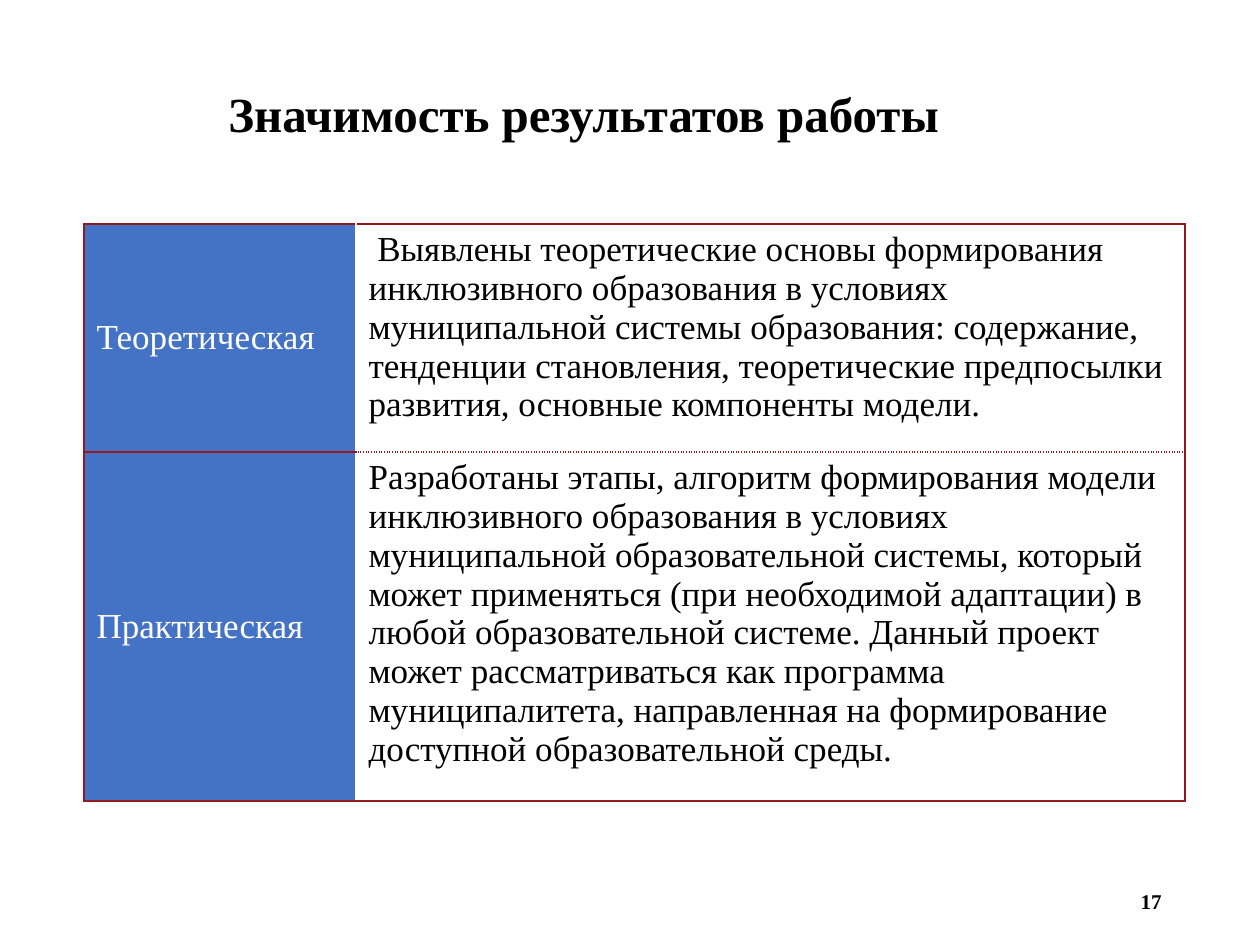
from lxml import etree
from pptx import Presentation
from pptx.dml.color import RGBColor
from pptx.enum.text import MSO_ANCHOR, PP_ALIGN
from pptx.oxml.ns import qn
from pptx.util import Emu, Pt

MIDDLE, TOP = MSO_ANCHOR.MIDDLE, MSO_ANCHOR.TOP
LEFT, CENTER, RIGHT = PP_ALIGN.LEFT, PP_ALIGN.CENTER, PP_ALIGN.RIGHT

BLACK = RGBColor(0x00, 0x00, 0x00)
WHITE = RGBColor(0xFF, 0xFF, 0xFF)
BLUE = RGBColor(0x44, 0x72, 0xC4)
DARK_RED = RGBColor(0x92, 0x1A, 0x1D)

FONT = "Times New Roman"
PX_PER_INCH = 126
COLUMN_WIDTHS = (272, 829)
ROW_HEIGHTS = (228, 323)

RESULTS = (
    ("Теоретическая",
     " Выявлены теоретические основы формирования инклюзивного образования "
     "в условиях муниципальной системы образования: содержание, тенденции "
     "становления, теоретические предпосылки развития, основные компоненты "
     "модели."),
    ("Практическая",
     "Разработаны этапы, алгоритм формирования модели инклюзивного "
     "образования в условиях муниципальной образовательной системы, который "
     "может применяться (при необходимой адаптации) в любой образовательной "
     "системе. Данный проект может рассматриваться как программа "
     "муниципалитета, направленная на формирование доступной образовательной "
     "среды."),
)


def px(n):
    return Emu(round(n * 914400 / PX_PER_INCH))


def write(tf, text, size, color=BLACK, bold=False, align=LEFT):
    """Fill a text frame with one formatted paragraph and return it."""
    p = tf.paragraphs[0]
    p.text = text
    p.alignment = align
    p.font.name = FONT
    p.font.size = Pt(size)
    p.font.bold = bold
    p.font.color.rgb = color
    return p


def add_title(s, text):
    sp = s.shapes.title
    sp.left, sp.top, sp.width, sp.height = px(121), px(53), px(925), px(127)
    sp.text_frame.vertical_anchor = MIDDLE
    p = write(sp.text_frame, text, 28, bold=True, align=CENTER)
    p.line_spacing = 0.9


def add_page_number(s, text):
    sp = s.shapes.add_textbox(px(891), px(876), px(283), px(50))
    tf = sp.text_frame
    tf.word_wrap = True
    tf.vertical_anchor = MIDDLE
    write(tf, text, 12, bold=True, align=RIGHT)


def add_border(cell, side, dash="solid"):
    """Draw one cell edge; side is L, R, T or B, in that order."""
    ln = etree.SubElement(cell._tc.get_or_add_tcPr(), qn(f"a:ln{side}"),
                          w=str(Pt(1)))
    fill = etree.SubElement(ln, qn("a:solidFill"))
    etree.SubElement(fill, qn("a:srgbClr"), val=str(DARK_RED))
    etree.SubElement(ln, qn("a:prstDash"), val=dash)


def format_cell(cell, text, fill, color, anchor):
    write(cell.text_frame, text, 20, color)
    cell.vertical_anchor = anchor
    cell.fill.solid()
    cell.fill.fore_color.rgb = fill


def add_results_table(s):
    frame = s.shapes.add_table(len(RESULTS), len(COLUMN_WIDTHS), px(84), px(224),
                               px(sum(COLUMN_WIDTHS)), px(sum(ROW_HEIGHTS)))
    table = frame.table
    table.first_row = table.horz_banding = False
    for column, width in zip(table.columns, COLUMN_WIDTHS):
        column.width = px(width)
    for row, height in zip(table.rows, ROW_HEIGHTS):
        row.height = px(height)

    last = len(RESULTS) - 1
    for i, (kind, result) in enumerate(RESULTS):
        label, body = table.cell(i, 0), table.cell(i, 1)
        for side in "LTB":
            add_border(label, side)
        add_border(body, "R")
        add_border(body, "T", "solid" if i == 0 else "sysDot")
        add_border(body, "B", "solid" if i == last else "sysDot")
        format_cell(label, kind, BLUE, WHITE, MIDDLE)
        format_cell(body, result, WHITE, BLACK, TOP)


def main():
    prs = Presentation()
    prs.slide_width, prs.slide_height = px(1260), px(945)
    s = prs.slides.add_slide(prs.slide_layouts[5])
    add_page_number(s, "17")
    add_title(s, "Значимость результатов работы")
    add_results_table(s)
    prs.save("out.pptx")


if __name__ == "__main__":
    main()
